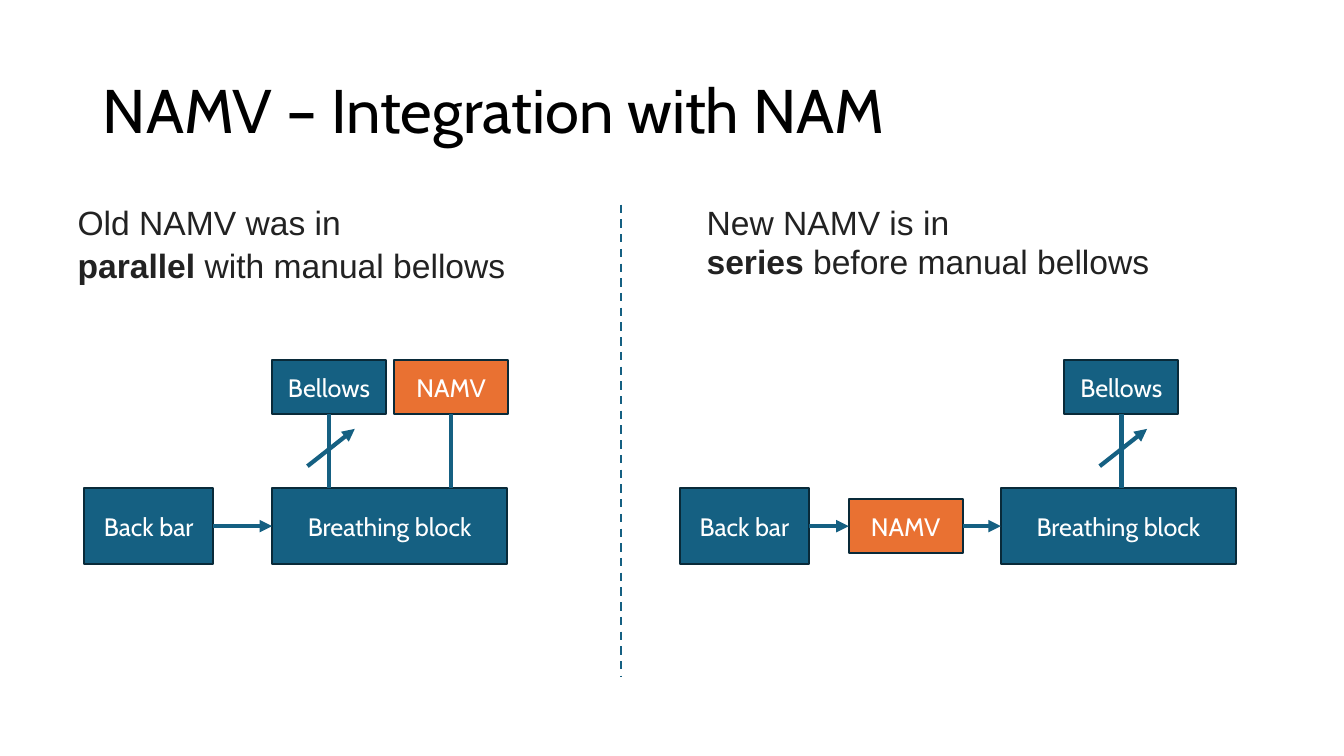
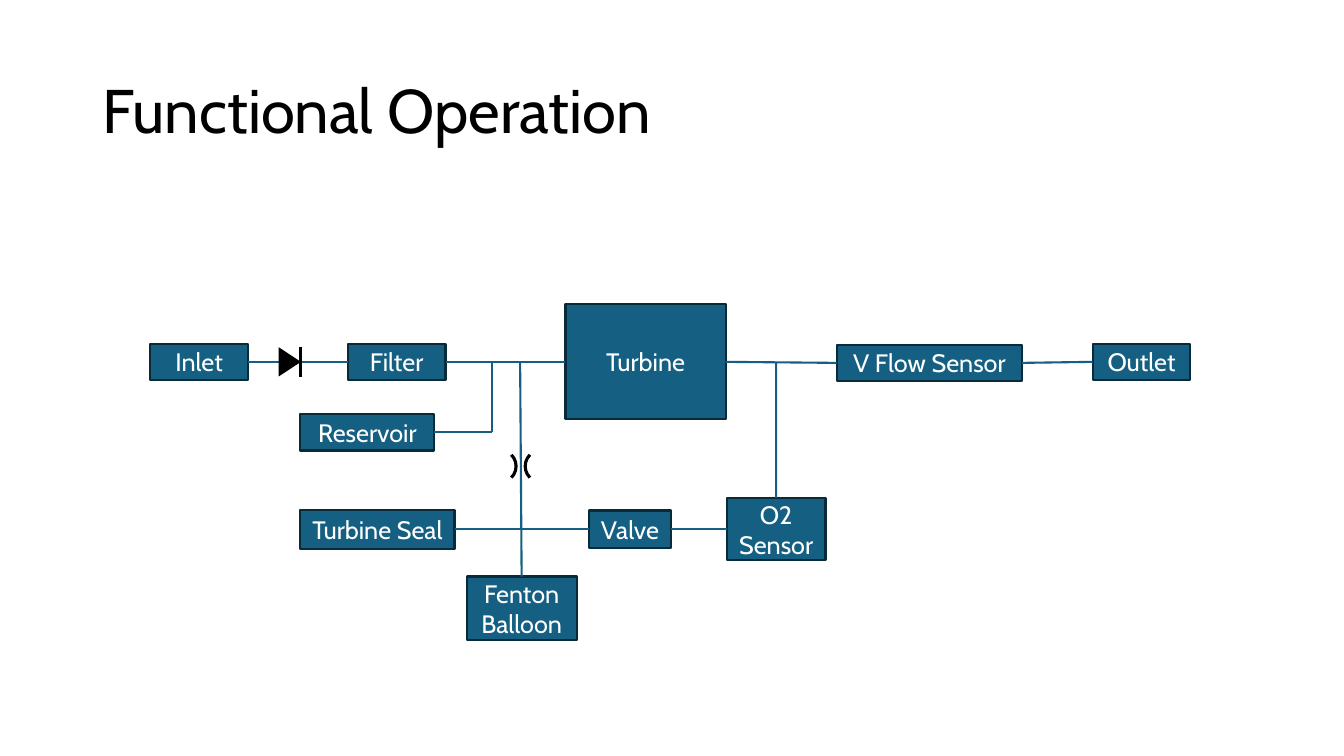
from lxml.etree import SubElement
from pptx import Presentation
from pptx.dml.color import RGBColor
from pptx.enum.dml import MSO_LINE
from pptx.enum.shapes import MSO_CONNECTOR, MSO_SHAPE
from pptx.enum.text import MSO_ANCHOR, MSO_AUTO_SIZE, PP_ALIGN
from pptx.oxml.ns import qn
from pptx.util import Inches, Pt

COLOURS = {
    "teal": "156082",
    "navy": "092A39",
    "orange": "E97132",
    "black": "000000",
    "charcoal": "222222",
    "white": "FFFFFF",
}
FONTS = {
    "title": {"name": "Cabin", "size": Pt(44), "bold": False},
    "list": {"name": "Arial", "size": Pt(24)},
    "box": {"name": "Cabin", "size": Pt(18)},
}
TITLE_LAYOUT, TWO_LISTS_LAYOUT = 5, 3
TOP, LEFT, BOTTOM, RIGHT = range(4)  # connection sites of a rectangle
COLUMNS, ROWS = 133.33, 75  # grid cells are a tenth of an inch


def cells(count):
    return Inches(count / 10)


def colour(name):
    return RGBColor.from_string(COLOURS[name])


def apply(target, values):
    """Set each attribute named in values on target."""
    for name, value in values.items():
        setattr(target, name, value)


class Deck:
    """Holds the presentation, its style and the current slide."""

    def __init__(self):
        self.presentation = Presentation()
        apply(self.presentation, {"slide_width": cells(COLUMNS), "slide_height": cells(ROWS)})
        self.slide = None

    def place(self, shape, left, top, width, height):
        names = ("left", "top", "width", "height")
        apply(shape, dict(zip(names, map(cells, (left, top, width, height)))))

    def style_font(self, font, style, colour_name):
        apply(font, FONTS[style])
        font.color.rgb = colour(colour_name)

    def new_slide(self, title, layout=TITLE_LAYOUT):
        self.slide = self.presentation.slides.add_slide(self.presentation.slide_layouts[layout])
        shape = self.slide.shapes.title
        self.place(shape, 9.2, 4, 115, 14.5)
        frame = shape.text_frame
        frame.text = title
        apply(frame, {"vertical_anchor": MSO_ANCHOR.MIDDLE, "auto_size": MSO_AUTO_SIZE.NONE})
        apply(frame.paragraphs[0], {"alignment": PP_ALIGN.LEFT, "line_spacing": 0.9})
        self.style_font(frame.paragraphs[0].runs[0].font, "title", "black")

    def list(self, index, area, lines, line_spacing):
        """Fill a body placeholder; each line is a list of (text, bold) runs."""
        shape = self.slide.placeholders[index]
        self.place(shape, *area)
        frame = shape.text_frame
        apply(frame, {"auto_size": MSO_AUTO_SIZE.NONE, "vertical_anchor": MSO_ANCHOR.TOP})
        for number, line in enumerate(lines):
            paragraph = frame.add_paragraph() if number else frame.paragraphs[0]
            apply(paragraph, {"level": 1, "line_spacing": line_spacing, "space_before": Pt(5)})
            properties = paragraph._p.get_or_add_pPr()
            properties.set("marL", str(cells(5)))
            properties.set("indent", "0")
            SubElement(properties, qn("a:buNone"))
            for text, bold in line:
                run = paragraph.add_run()
                run.text = text
                self.style_font(run.font, "list", "charcoal")
                run.font.bold = bold

    def shape(self, kind, centre, size, fill=None, line=None, width=1.5, rotation=0):
        (column, row), (across, down) = centre, size
        area = (column - across / 2, row - down / 2, across, down)
        shape = self.slide.shapes.add_shape(kind, *map(cells, area))
        shape.shadow.inherit = False
        shape.rotation = rotation
        if fill:
            shape.fill.solid()
            shape.fill.fore_color.rgb = colour(fill)
        else:
            shape.fill.background()
        if line:
            shape.line.color.rgb = colour(line)
            shape.line.width = Pt(width)
        else:
            shape.line.fill.background()
        return shape

    def box(self, text, centre, size, fill="teal"):
        box = self.shape(MSO_SHAPE.RECTANGLE, centre, size, fill, "navy")
        box.text_frame.text = text
        box.text_frame.vertical_anchor = MSO_ANCHOR.MIDDLE
        for paragraph in box.text_frame.paragraphs:
            paragraph.alignment = PP_ALIGN.CENTER
            self.style_font(paragraph.runs[0].font, "box", "white")
        return box

    def line(self, start, end, width=1.5, colour_name="teal", dash=None, arrow=False):
        """Draw from start to end, each a (column, row) or a (shape, site)."""
        ends = [(point, isinstance(point[0], (int, float))) for point in (start, end)]
        corners = [cells(value) for point, free in ends for value in (point if free else (0, 0))]
        connector = self.slide.shapes.add_connector(MSO_CONNECTOR.STRAIGHT, *corners)
        for join, (point, free) in zip((connector.begin_connect, connector.end_connect), ends):
            if not free:
                join(*point)
        connector.line.color.rgb = colour(colour_name)
        apply(connector.line, {"width": Pt(width), "dash_style": dash})
        properties = connector._element.spPr
        if arrow:
            SubElement(properties.find(qn("a:ln")), qn("a:tailEnd")).set("type", "triangle")
        SubElement(properties, qn("a:effectLst"))


def integration_slide(deck):
    flow_row, upper_row, block_top = 52.2, 38.4, 48.4
    bar, block, small = (12.8, 7.6), (23.3, 7.6), (11.3, 5.3)
    thick = {"width": 3}
    thick_arrow = {"width": 3, "arrow": True}

    def add_drop(box, column):
        deck.line((box, BOTTOM), (column, block_top), **thick)

    def add_bellows(column):
        bellows = deck.box("Bellows", (column, upper_row), small)
        add_drop(bellows, column)
        middle, row = column + 0.2, upper_row + 6
        deck.line((middle - 2.35, row + 1.85), (middle + 2.35, row - 1.85), **thick_arrow)

    deck.new_slide("NAMV – Integration with NAM", TWO_LISTS_LAYOUT)
    deck.list(1, (1.7, 20, 59.8, 11.2), [
        [("Old NAMV was in", False)],
        [("parallel", True), (" with manual bellows", False)],
    ], 0.9)
    deck.list(2, (64.1, 20.3, 66.7, 8.3), [
        [("New NAMV is in", False)],
        [("series", True), (" before manual bellows", False)],
    ], 0.8)
    deck.line((61.6, 20.3), (61.6, 67.1), dash=MSO_LINE.DASH)

    flows = [
        [("Back bar", 14.75, bar, "teal"), ("Breathing block", 38.65, block, "teal")],
        [("Back bar", 73.85, bar, "teal"), ("NAMV", 89.85, small, "orange"),
         ("Breathing block", 110.95, block, "teal")],
    ]
    for flow in flows:
        boxes = [deck.box(text, (column, flow_row), size, fill) for text, column, size, fill in flow]
        for source, target in zip(boxes, boxes[1:]):
            deck.line((source, RIGHT), (target, LEFT), **thick_arrow)
    for column in (32.65, 111.25):
        add_bellows(column)
    add_drop(deck.box("NAMV", (44.75, upper_row), small, "orange"), 44.75)


def operation_slide(deck):
    main_row, lower_row, reservoir_row = 35.9, 52.5, 42.9
    reservoir_column, balloon_column, sensor_column = 48.8, 51.6, 77
    deck.new_slide("Functional Operation")
    layout = {
        "Inlet": (19.75, main_row, 9.7, 3.6),
        "Filter": (39.35, main_row, 9.7, 3.6),
        "Turbine": (64.05, main_row, 15.9, 11.4),
        "V Flow Sensor": (92.2, main_row + 0.1, 18.4, 3.6),
        "Outlet": (113.25, main_row, 9.7, 3.6),
        "Reservoir": (36.45, reservoir_row, 13.3, 3.6),
        "Turbine Seal": (37.45, lower_row, 15.3, 3.9),
        "Valve": (62.5, lower_row, 8.2, 3.7),
        "O2\nSensor": (sensor_column, lower_row, 9.8, 6.2),
        "Fenton\nBalloon": (51.75, 60.35, 10.9, 6.3),
    }
    boxes = {text: deck.box(text, area[:2], area[2:]) for text, area in layout.items()}

    pipelines = [
        ("Inlet", "Filter", "Turbine", "V Flow Sensor", "Outlet"),
        ("Turbine Seal", "Valve", "O2\nSensor"),
    ]
    for pipeline in pipelines:
        for source, target in zip(pipeline, pipeline[1:]):
            deck.line((boxes[source], RIGHT), (boxes[target], LEFT))
    deck.line((boxes["Reservoir"], RIGHT), (reservoir_column, reservoir_row))
    deck.line((reservoir_column, reservoir_row), (reservoir_column, main_row))
    deck.line((balloon_column, main_row), (boxes["Fenton\nBalloon"], TOP))
    deck.line((sensor_column, main_row), (boxes["O2\nSensor"], TOP))

    # Check valve and flow restrictor
    deck.shape(MSO_SHAPE.ISOSCELES_TRIANGLE, (28.75, main_row), (2.9, 2.2), "black", rotation=90)
    deck.line((29.8, main_row - 1.5), (29.8, main_row + 1.5), 2.25, "black")
    for column, rotation in ((49.6, 45), (53.7, 225)):
        deck.shape(MSO_SHAPE.ARC, (column, 46.25), (3.2, 3.2),
                   line="black", width=2.25, rotation=rotation)


def main():
    deck = Deck()
    integration_slide(deck)
    operation_slide(deck)
    deck.presentation.save("out.pptx")


if __name__ == "__main__":
    main()
